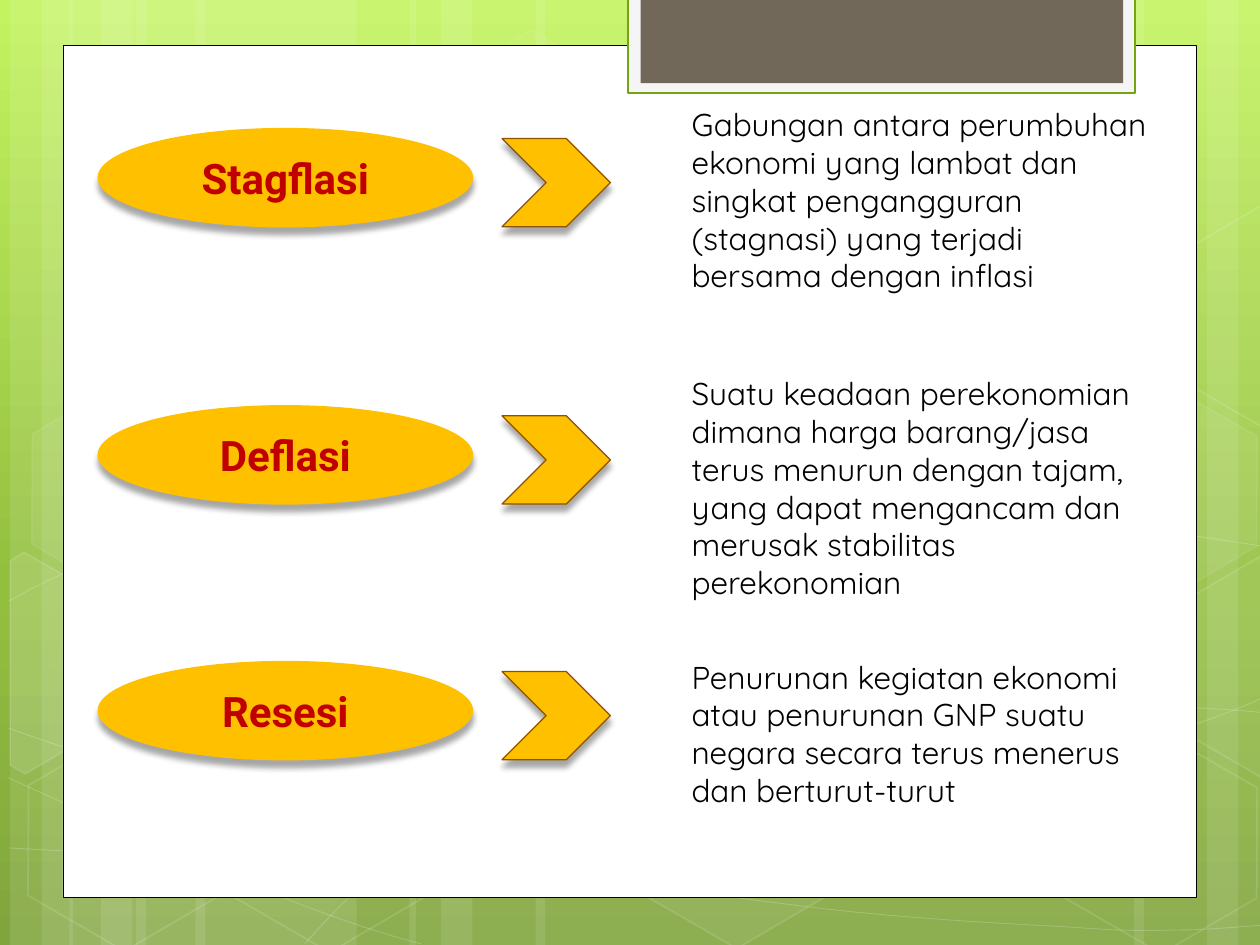
from copy import deepcopy
from math import cos, radians, sin

from lxml.etree import SubElement
from pptx import Presentation
from pptx.dml.color import RGBColor
from pptx.enum.shapes import MSO_SHAPE
from pptx.enum.text import MSO_ANCHOR, MSO_AUTO_SIZE, PP_ALIGN
from pptx.oxml.ns import qn
from pptx.util import Inches, Pt

WHITE = RGBColor(0xFF, 0xFF, 0xFF)
BLACK = RGBColor(0x00, 0x00, 0x00)
SKY = [(0, RGBColor(0xC3, 0xF3, 0x5F)), (0.62, RGBColor(0x93, 0xBF, 0x3F)),
       (1, RGBColor(0x81, 0xA5, 0x3E))]
PALE = RGBColor(0xF5, 0xF5, 0xF5)
GREEN = RGBColor(0x74, 0xA5, 0x10)
TAUPE = RGBColor(0x71, 0x68, 0x5A)
AMBER = RGBColor(0xFF, 0xC0, 0x00)
BROWN = RGBColor(0x8F, 0x52, 0x01)
RED = RGBColor(0xC0, 0x00, 0x00)

deck = Presentation()
deck.slide_width, deck.slide_height = Inches(10), Inches(7.5)
page = deck.slides.add_slide(deck.slide_layouts[6])

# Grid of 100 columns by 75 rows
CELL = deck.slide_width // 100


def paint(shape, fill=None, line=None, width=0.75, fill_alpha=100, line_alpha=100):
    """Set fill and line, each with its opacity in percent."""
    shape.shadow.inherit = False
    for style, color, alpha in ((shape.fill, fill, fill_alpha),
                                (shape.line.fill, line, line_alpha)):
        if color is None:
            style.background()
            continue
        style.solid()
        style.fore_color.rgb = color
        if alpha < 100:
            props = shape._element.spPr
            owner = props if style is shape.fill else props.find(qn("a:ln"))
            tint = owner.find(qn("a:solidFill")).find(qn("a:srgbClr"))
            SubElement(tint, qn("a:alpha"), val=str(alpha * 1000))
    if line is not None:
        shape.line.width = Pt(width)
    return shape


def place(kind, column, row, columns, rows):
    """Add a preset shape on the grid."""
    return page.shapes.add_shape(kind, *(round(n * CELL) for n in (column, row, columns, rows)))


# Green background gradient, top to bottom
backdrop = page.background.fill
backdrop.gradient()
backdrop.gradient_angle = 270
stop_list = backdrop.gradient_stops[0]._gs.getparent()
stop_list.append(deepcopy(stop_list[-1]))
for stop, (position, color) in zip(backdrop.gradient_stops, SKY):
    stop.position = position
    stop.color.rgb = color

# Translucent vertical bands: column, width
BANDS = [(10.8, 17.5), (0.8, 5), (3.3, 8.3), (15.5, 17.5), (5.5, 5), (8, 8.3),
         (73.3, 17.5), (95.8, 5), (90, 8.3), (42.5, 30.8), (32.5, 5), (35, 8.3)]
for column, columns in BANDS:
    paint(place(MSO_SHAPE.RECTANGLE, column, 0, columns, 75), WHITE, fill_alpha=10)

# Sweeping lines: a start point, then two handles and an end for each stretch
CURVES = [
    [(0.7, 67.3), (6.1, 67.6), (11.5, 67.9), (19, 67.8), (26.5, 67.7), (35.8, 67.5),
     (45.8, 66.5), (55.8, 65.5), (70, 63.6), (79.2, 61.7), (88.3, 59.8), (97.7, 56.8),
     (100.7, 55.1)],
    [(0.7, 47.7), (3.6, 46.1), (6.5, 44.6), (12.1, 43.1), (17.8, 41.6), (25.9, 39.4),
     (34.7, 38.7), (43.6, 38), (54.4, 37.9), (65.4, 38.7), (76.4, 39.5), (94.7, 42.6),
     (100.7, 43.4)],
    [(0.6, 61.7), (12.7, 67.2), (24.7, 72.7), (33.4, 74.9)],
    [(0.7, 57.8), (3.8, 58.9), (7, 60), (12.8, 61.6), (18.6, 63.1), (27.3, 65.6),
     (35.7, 67.3), (44, 69), (54.5, 70.8), (62.8, 71.8), (71.1, 72.9), (80, 73.3),
     (85.3, 73.6), (90.5, 74), (91.9, 73.8), (94.5, 73.8), (97.1, 73.7), (98.9, 73.5),
     (100.7, 73.4)],
    [(24.2, 74.9), (26, 72.9), (27.8, 70.9), (30.2, 69.1), (32.6, 67.3), (36, 65.3),
     (38.8, 63.9), (41.6, 62.5), (43.3, 61.9), (47, 60.9), (50.6, 59.9), (57.3, 58.5),
     (60.8, 57.8), (64.4, 57.1), (64.9, 57.1), (68, 56.9), (71.1, 56.6), (76, 56.3),
     (79.4, 56.2), (82.9, 56.1), (88.6, 56.2), (88.6, 56.2), (91, 56.2), (93, 56.2),
     (95.3, 56.2), (97.1, 56.3), (98.8, 56.4), (100.6, 56.6)],
]
for curve in CURVES:
    start, *points = [(x * CELL, y * CELL) for x, y in curve]
    builder = page.shapes.build_freeform(*start)
    builder.add_line_segments(points, close=False)
    sweep = paint(builder.convert_to_shape(), line=WHITE, width=0.5, line_alpha=20)
    # Turn every three straight segments into one Bezier stretch
    outline = next(sweep._element.iter(qn("a:path")))
    segments = outline.findall(qn("a:lnTo"))
    for first in range(0, len(segments), 3):
        stretch = SubElement(outline, qn("a:cubicBezTo"))
        for segment in segments[first:first + 3]:
            stretch.append(segment[0])
            outline.remove(segment)

# Faint hexagons: column, row, fill opacity, line opacity
HEXAGONS = [(33.4, 3.6, 4, 8), (49.7, 58.9, 6, 12), (1.1, 59.1, 0, 12), (1.4, 31.2, 7, 8),
            (17.4, 59.2, 0, 12), (75.3, 45.3, 10, 12), (83.4, 59.3, 0, 12),
            (83.4, 31.4, 7, 8)]
TILT = 30
for column, row, fill_alpha, line_alpha in HEXAGONS:
    hexagon = place(MSO_SHAPE.HEXAGON, column, row, 17.5, 15.2)
    hexagon.adjustments[0] = 0.285
    hexagon.adjustments[1] = 1.155
    hexagon.rotation = TILT
    paint(hexagon, WHITE if fill_alpha else None, WHITE, 1, fill_alpha, line_alpha)

# Hexagons cut by the slide's edges: centre, corners as they stand tilted, fill opacity
CUT_HEXAGONS = [
    ((3.6, 53.5), [(0.8, 44.5), (1.9, 43.8), (9.6, 48.2), (9.5, 57), (2, 61.4),
                   (0.8, 60.7)], 10),
    ((98.5, 52), [(92.6, 48.5), (100.1, 44.1), (100.9, 44.6), (100.9, 61.3), (100.2, 61.7),
                  (92.6, 57.3)], 4),
    ((98.5, 24.1), [(92.6, 20.7), (100.1, 16.3), (101, 16.8), (100.9, 33.5), (100.2, 33.9),
                    (92.6, 29.5)], 0),
]
cosine, sine = cos(radians(TILT)), sin(radians(TILT))
for (middle_x, middle_y), corners, fill_alpha in CUT_HEXAGONS:
    offsets = [(x - middle_x, y - middle_y) for x, y in corners]
    start, *points = [((middle_x + x * cosine + y * sine) * CELL,
                       (middle_y - x * sine + y * cosine) * CELL) for x, y in offsets]
    builder = page.shapes.build_freeform(*start)
    builder.add_line_segments(points)
    cut = paint(builder.convert_to_shape(), WHITE if fill_alpha else None, WHITE, 1,
                fill_alpha, 12)
    cut.rotation = TILT

# White panel and the tab at its top
paint(place(MSO_SHAPE.RECTANGLE, 5, 3.6, 90, 67.65), WHITE, BLACK, 0.5)
paint(place(MSO_SHAPE.RECTANGLE, 49.85, -0.2, 40.25, 7.6), PALE, GREEN, 1.25)
paint(place(MSO_SHAPE.RECTANGLE, 50.85, -0.2, 38.3, 6.8), TAUPE)

# Terms: name, ellipse row, text row, text width, text height, meaning
TERMS = [
    ("Stagflasi", 10.2, 7.85, 38.3, 19.2,
     "Gabungan antara perumbuhan ekonomi yang lambat dan singkat pengangguran "
     "(stagnasi) yang terjadi bersama dengan inflasi"),
    ("Deflasi", 32.2, 29.2, 39.1, 19.2,
     "Suatu keadaan perekonomian dimana harga barang/jasa terus menurun dengan tajam, "
     "yang dapat mengancam dan merusak stabilitas perekonomian"),
    ("Resesi", 52.5, 51.7, 38.3, 13.1,
     "Penurunan kegiatan ekonomi atau penurunan GNP suatu negara secara terus menerus "
     "dan berturut-turut"),
]
for name, row, text_row, columns, rows, meaning in TERMS:
    chevron = paint(place(MSO_SHAPE.CHEVRON, 39.85, row + 0.8, 8.6, 7), AMBER, BROWN)
    ellipse = paint(place(MSO_SHAPE.OVAL, 7.8, row, 29.7, 7.8), AMBER, AMBER)
    for shape in (chevron, ellipse):
        effects = shape._element.spPr.find(qn("a:effectLst"))
        shadow = SubElement(effects, qn("a:outerShdw"), blurRad=str(Pt(3.5)),
                            dist=str(Pt(4)), dir="5400000", rotWithShape="0")
        shade = SubElement(shadow, qn("a:srgbClr"), val=str(BLACK))
        SubElement(shade, qn("a:alpha"), val="34000")

    box = page.shapes.add_textbox(*(round(n * CELL) for n in (53.9, text_row, columns, rows)))
    for frame, text, font, size, color in (
            (ellipse.text_frame, name, "Roboto", 24, RED),
            (box.text_frame, meaning, "Quicksand", 18, BLACK)):
        frame.word_wrap = True
        para = frame.paragraphs[0]
        para.text = text
        para.font.name, para.font.size = font, Pt(size)
        para.font.color.rgb = color
    box.text_frame.auto_size = MSO_AUTO_SIZE.SHAPE_TO_FIT_TEXT
    ellipse.text_frame.vertical_anchor = MSO_ANCHOR.MIDDLE
    ellipse.text_frame.paragraphs[0].alignment = PP_ALIGN.CENTER
    ellipse.text_frame.paragraphs[0].font.bold = True

deck.save("out.pptx")
